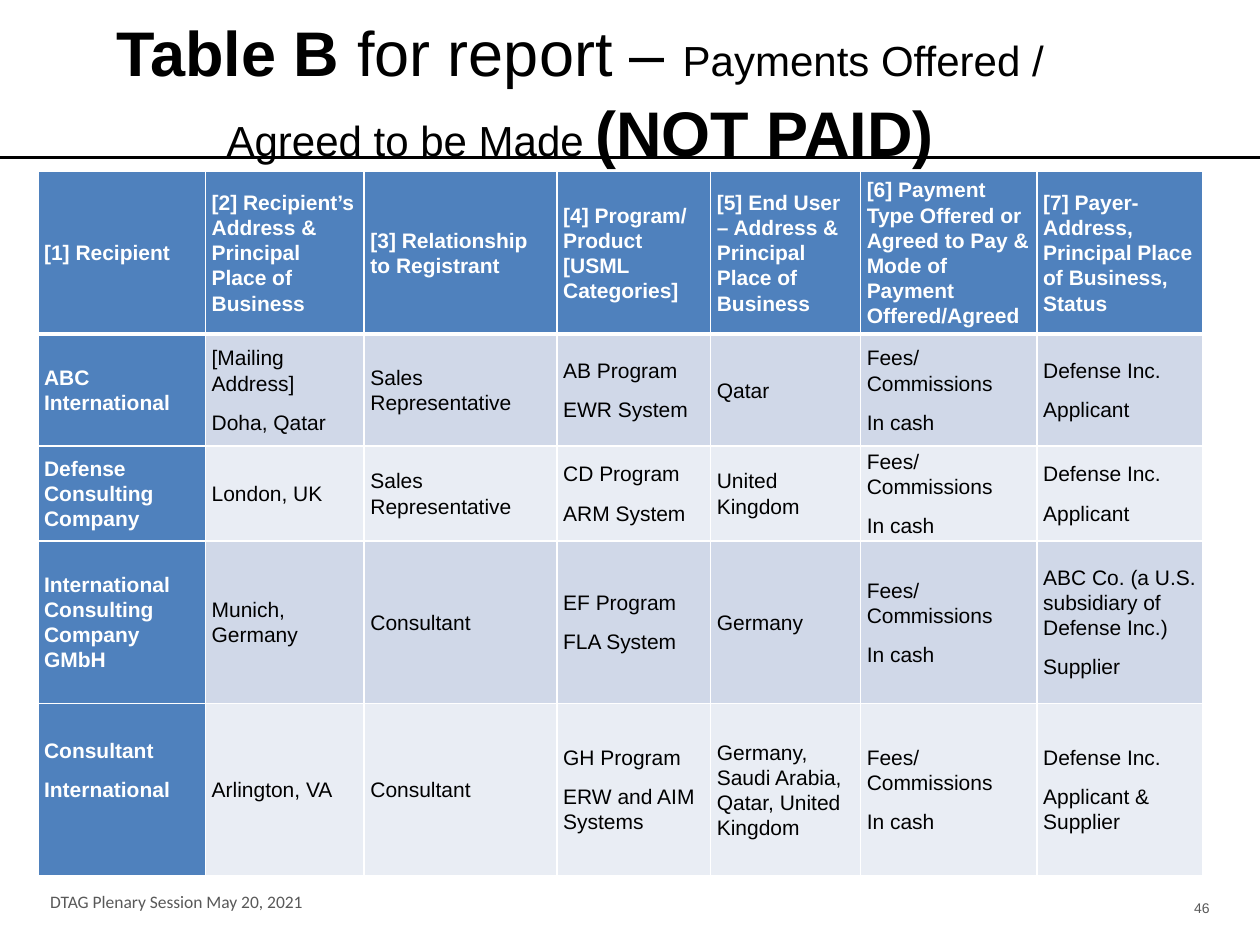
"""Build the Table B slide on payments offered or agreed but not paid."""
import pptx
import pptx.dml.color
import pptx.enum.shapes
import pptx.enum.text
import pptx.oxml
import pptx.oxml.ns
import pptx.util
from pptx.dml.color import RGBColor
from pptx.util import Inches, Pt

BLACK = RGBColor(0x00, 0x00, 0x00)
WHITE = RGBColor(0xFF, 0xFF, 0xFF)
GRAY = RGBColor(0x59, 0x59, 0x59)
BLUE = RGBColor(0x4F, 0x81, 0xBD)
BANDS = [RGBColor(0xD0, 0xD8, 0xE8), RGBColor(0xE9, 0xED, 0xF4)]
LEFT = pptx.enum.text.PP_ALIGN.LEFT
CENTER = pptx.enum.text.PP_ALIGN.CENTER
RIGHT = pptx.enum.text.PP_ALIGN.RIGHT
MIDDLE = pptx.enum.text.MSO_ANCHOR.MIDDLE

TITLE = [
    ("Table B ", 36, True),
    ("for report – ", 36, False),
    ("Payments Offered / Agreed to be Made ", 24, False),
    ("(NOT PAID)", 36, True),
]
FOOTER = "DTAG Plenary Session May 20, 2021"
PAGE_NUMBER = "46"
HEADERS = [
    "[1] Recipient",
    "[2] Recipient’s Address & Principal Place of Business",
    "[3] Relationship to Registrant",
    "[4] Program/ Product [USML Categories]",
    "[5] End User – Address & Principal Place of Business",
    "[6] Payment Type Offered or Agreed to Pay & Mode of Payment Offered/Agreed",
    "[7] Payer- Address, Principal Place of Business, Status",
]
FEES = "Fees/ Commissions\nIn cash"
RECIPIENTS = [
    ["ABC International", "[Mailing Address]\nDoha, Qatar", "Sales Representative",
     "AB Program\nEWR System", "Qatar", FEES, "Defense Inc.\nApplicant"],
    ["Defense Consulting Company", "London, UK", "Sales Representative",
     "CD Program\nARM System", "United Kingdom", FEES, "Defense Inc.\nApplicant"],
    ["International Consulting Company GMbH", "Munich, Germany", "Consultant",
     "EF Program\nFLA System", "Germany", FEES,
     "ABC Co. (a U.S. subsidiary of Defense Inc.)\nSupplier"],
    ["Consultant\nInternational", "Arlington, VA", "Consultant",
     "GH Program\nERW and AIM Systems", "Germany, Saudi Arabia, Qatar, United Kingdom",
     FEES, "Defense Inc.\nApplicant & Supplier"],
]
COLUMN_WIDTHS = [1.33, 1.26, 1.53, 1.22, 1.19, 1.4, 1.32]
ROW_HEIGHTS = [1.29, 0.89, 0.75, 1.29, 1.37]
LAST_RECIPIENT_BOTTOM = 0.31


def write_text(frame, text, size=12, font="Arial", color=BLACK, bold=False,
               align=LEFT, line_spacing=None, space_after=None):
    """Fill a text frame from a string, or from (text, size, bold) runs."""
    frame.word_wrap = True
    if isinstance(text, str):
        lines = [[(line, size, bold)] for line in text.split("\n")]
    else:
        lines = [text]
    for index, runs in enumerate(lines):
        paragraph = frame.paragraphs[0] if index == 0 else frame.add_paragraph()
        paragraph.alignment = align
        if line_spacing is not None:
            paragraph.line_spacing = line_spacing
        if space_after is not None:
            paragraph.space_after = Pt(space_after)
        for words, run_size, run_bold in runs:
            run = paragraph.add_run()
            run.text = words
            run.font.size = Pt(run_size)
            run.font.name = font
            run.font.bold = run_bold
            run.font.color.rgb = color


def add_text_box(slide, box, text, **text_format):
    """Add a vertically centred text box."""
    shape = slide.shapes.add_textbox(*map(Inches, box))
    shape.text_frame.vertical_anchor = MIDDLE
    write_text(shape.text_frame, text, **text_format)


def set_borders(cell, **widths):
    """Give a cell white borders, with widths in points by side."""
    properties = cell._tc.get_or_add_tcPr()
    for side in "LRTB":
        width = int(Pt(widths.get(side, 1)))
        properties.append(pptx.oxml.parse_xml(
            f'<a:ln{side} {pptx.oxml.ns.nsdecls("a")} w="{width}"><a:solidFill>'
            f'<a:srgbClr val="{WHITE}"/></a:solidFill></a:ln{side}>'))


def add_header_rule(slide):
    """Draw the rule across the slide under the title."""
    rule = slide.shapes.add_connector(
        pptx.enum.shapes.MSO_CONNECTOR.STRAIGHT,
        Inches(0), Inches(1.25), Inches(10), Inches(1.25))
    rule.line.color.rgb = BLACK
    rule.line.width = Pt(2)
    rule._element.spPr.append(
        pptx.oxml.parse_xml(f'<a:effectLst {pptx.oxml.ns.nsdecls("a")}/>'))


def add_payment_table(slide):
    """Add the table of recipients and their payments."""
    rows = [HEADERS] + RECIPIENTS
    table = slide.shapes.add_table(
        len(rows), len(HEADERS), Inches(0.3), Inches(1.36),
        Inches(sum(COLUMN_WIDTHS)), Inches(sum(ROW_HEIGHTS))).table
    table.first_col = True
    for column, width in zip(table.columns, COLUMN_WIDTHS):
        column.width = Inches(width)
    for row, height in zip(table.rows, ROW_HEIGHTS):
        row.height = Inches(height)
    for row_index, texts in enumerate(rows):
        for column_index, text in enumerate(texts):
            cell = table.cell(row_index, column_index)
            heading = row_index == 0 or column_index == 0
            cell.vertical_anchor = MIDDLE
            cell.margin_left = cell.margin_right = Inches(0.05)
            cell.margin_top = cell.margin_bottom = 0
            set_borders(cell, T=3 if row_index == 1 else 1, B=3 if row_index == 0 else 1)
            cell.fill.solid()
            cell.fill.fore_color.rgb = BLUE if heading else BANDS[(row_index - 1) % 2]
            write_text(cell.text_frame, text, color=WHITE if heading else BLACK,
                       bold=heading, line_spacing=1.07, space_after=8)
    table.cell(len(rows) - 1, 0).margin_bottom = Inches(LAST_RECIPIENT_BOTTOM)


def main():
    """Build and save the presentation."""
    presentation = pptx.Presentation()
    presentation.slide_width = Inches(10)
    presentation.slide_height = Inches(7.5)
    slide = presentation.slides.add_slide(presentation.slide_layouts[6])
    add_header_rule(slide)
    add_text_box(slide, (0.46, 0.35, 8.29, 0.72), TITLE, align=CENTER, line_spacing=1.05)
    add_text_box(slide, (0.3, 7.01, 9.4, 0.29), FOOTER, size=10, font="Calibri", color=GRAY)
    add_text_box(slide, (9.2, 7.01, 0.5, 0.39), PAGE_NUMBER, size=8, color=GRAY, align=RIGHT)
    add_payment_table(slide)
    presentation.save("out.pptx")


if __name__ == "__main__":
    main()
